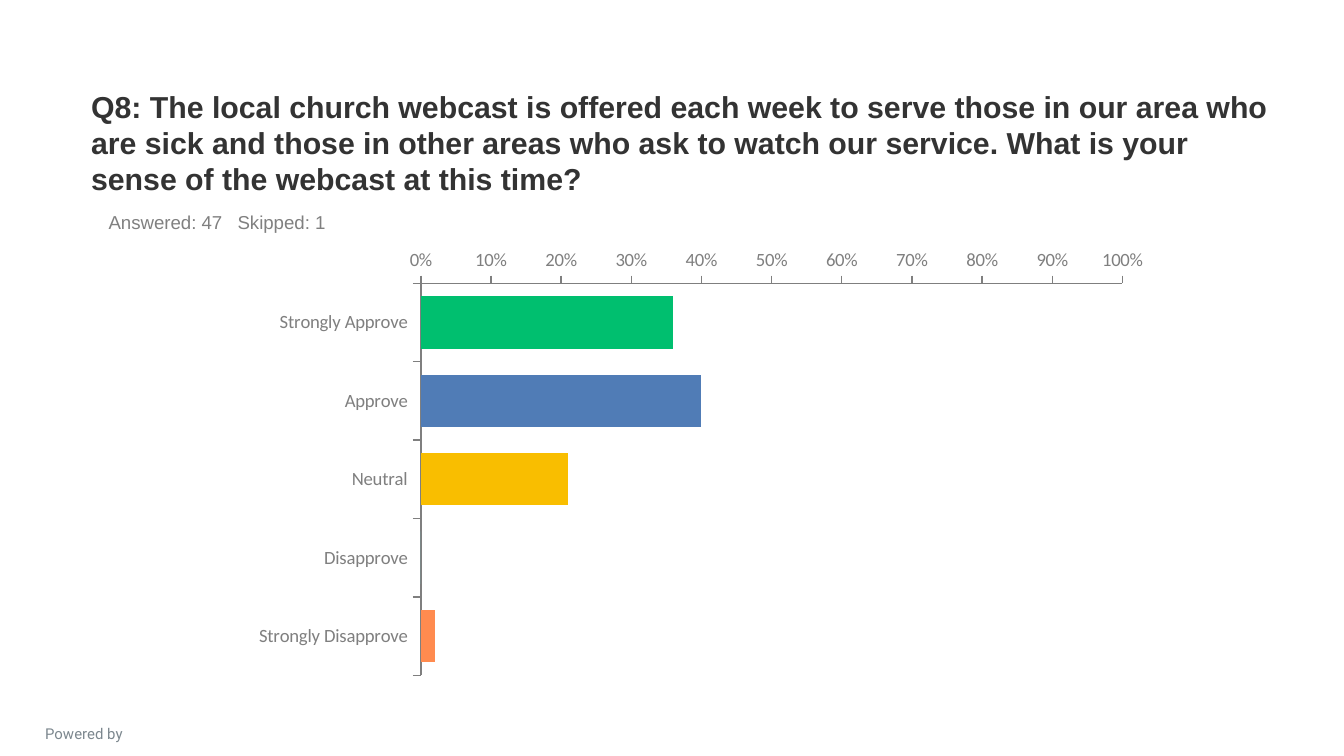
from lxml import etree
from pptx import Presentation, util as u
from pptx.chart import data as chart_data
from pptx.dml import color
from pptx.enum import chart as ch, text
from pptx.oxml import ns

WIDTH = 10
HEIGHT = WIDTH * 9 / 16
GREY = "7F7F7F"
ANSWERS = {
    "Strongly Approve": (0.36, "00BF6F"),
    "Approve": (0.40, "507CB6"),
    "Neutral": (0.21, "F9BE00"),
    "Disapprove": (0, "6BC8CD"),
    "Strongly Disapprove": (0.02, "FF8B4F"),
}


def rgb(value):
    """Turn a hex string into a colour."""
    return color.RGBColor.from_string(value)


def assign(target, **values):
    """Set each named attribute on the target."""
    for key, value in values.items():
        setattr(target, key, value)


def style(font, face, size, hue, bold=False):
    """Give a font its face, size, colour and weight."""
    assign(font, name=face, size=u.Pt(size), bold=bold)
    font.color.rgb = rgb(hue)


def place(box):
    """Turn shares of the slide's size into lengths."""
    return [u.Inches(share * side) for share, side in zip(box, (WIDTH, HEIGHT) * 2)]


def add_words(slide, box, words, font, frame=None, align=text.PP_ALIGN.LEFT, tab=None):
    """Place one paragraph of text in the box."""
    holder = slide.shapes.add_textbox(*place(box)).text_frame
    assign(holder, **{"word_wrap": True, **(frame or {})})
    line = holder.paragraphs[0]
    line.alignment = align
    if tab:
        stops = etree.SubElement(line._p.get_or_add_pPr(), ns.qn("a:tabLst"))
        etree.SubElement(stops, ns.qn("a:tab"), pos=str(u.Inches(tab)), algn="l")
    run = line.add_run()
    run.text = words
    style(run.font, *font)


def add_heading(slide, box):
    """Place the question and the answer counts in the box."""
    left, top, width, height = box
    add_words(
        slide, (left, top, width, height * 0.69),
        "Q8: The local church webcast is offered each week to serve those in our area who "
        "are sick and those in other areas who ask to watch our service. "
        "What is your sense of the webcast at this time?",
        ("Arial", 16.2, "333333", True),
        {"vertical_anchor": text.MSO_ANCHOR.BOTTOM},
    )
    add_words(
        slide, (left + 0.013, top + height * 0.7, width, height * 0.3),
        "Answered: 47\tSkipped: 1", ("Arial", 10, "808080"), tab=0.96,
    )


def add_answers(slide, box):
    """Place the bar chart of answer shares in the box."""
    answers = chart_data.CategoryChartData(number_format="0%")
    answers.categories = list(ANSWERS)
    answers.add_series("Series 1", [share for share, _ in ANSWERS.values()])
    chart = slide.shapes.add_chart(
        ch.XL_CHART_TYPE.BAR_CLUSTERED, *place(box), answers
    ).chart
    assign(chart, has_legend=False, has_title=False)
    style(chart.font, "Calibri", 18, "333333")

    bars = chart.plots[0]
    assign(bars, gap_width=50, overlap=100, vary_by_categories=False)
    series = bars.series[0]
    series.invert_if_negative = False
    fills = [series.format.fill]
    fills += [series.points[i].format.fill for i in range(len(ANSWERS))]
    hues = [hue for _, hue in ANSWERS.values()]
    for fill, hue in zip(fills, hues[:1] + hues):
        fill.solid()
        fill.fore_color.rgb = rgb(hue)

    formats = {
        chart.category_axis: {
            "reverse_order": True,
            "crosses_at": len(ANSWERS) + 1,
            "tick_label_position": ch.XL_TICK_LABEL_POSITION.LOW,
        },
        chart.value_axis: {"minimum_scale": 0, "maximum_scale": 1, "major_unit": 0.1},
    }
    for axis, values in formats.items():
        assign(
            axis, has_major_gridlines=False, major_tick_mark=ch.XL_TICK_MARK.OUTSIDE,
            minor_tick_mark=ch.XL_TICK_MARK.NONE, **values,
        )
        style(axis.tick_labels.font, "Calibri", 10, GREY)
        axis.format.line.width = u.Pt(0.75)
        axis.format.line.color.rgb = rgb(GREY)
    assign(chart.value_axis.tick_labels, number_format="0%", number_format_is_linked=False)


def add_footer(slide, box):
    """Place the footer words in the box."""
    add_words(
        slide, box, "Powered by", ("Roboto", 8, "7C878E"), align=text.PP_ALIGN.CENTER
    )


def main():
    """Build the survey slide and save it."""
    deck = Presentation()
    assign(deck, slide_width=u.Inches(WIDTH), slide_height=u.Inches(HEIGHT))
    slide = deck.slides.add_slide(deck.slide_layouts[6])
    add_footer(slide, (0.005, 0.95, 0.115, 0.03))
    add_heading(slide, (0.058, 0.162, 0.9, 0.155))
    add_answers(slide, (0.179, 0.318, 0.685, 0.587))
    deck.save("out.pptx")


if __name__ == "__main__":
    main()
